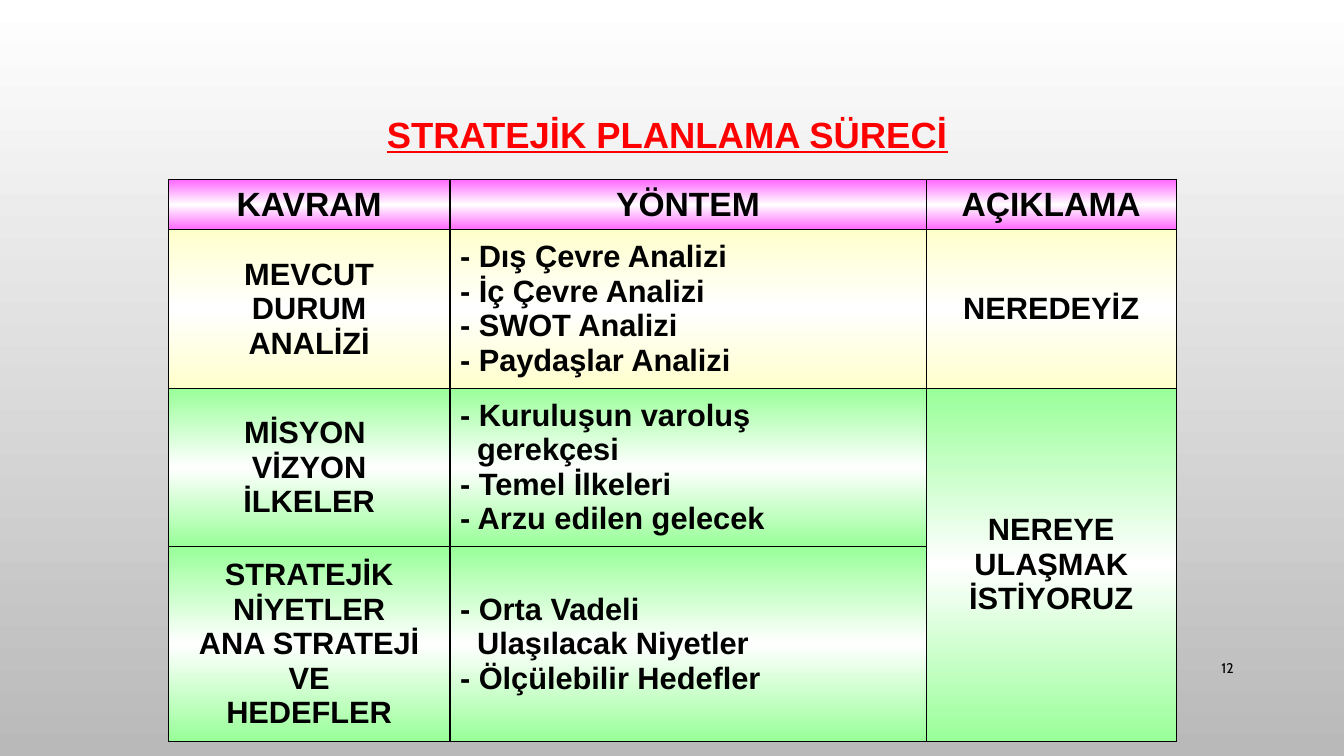
from copy import deepcopy

from lxml.etree import SubElement
from pptx import Presentation
from pptx.dml.color import RGBColor
from pptx.enum.text import MSO_ANCHOR as Anchor, PP_ALIGN as Align
from pptx.oxml.ns import qn
from pptx.util import Cm, Pt

BLACK, RED, WHITE, GREY = "000000", "FF0000", "FFFFFF", "B9B9B9"
PINK, CREAM, GREEN = "FF66FF", "FFFFCC", "99FF99"
COLUMN_WIDTHS = [7.1, 12, 6.3]
HANGING = Cm(0.43)

# Row height, edge colour, text size and cell texts;
# "\n" starts a paragraph, "\v" breaks a line inside one
ROWS = [
    (1.27, PINK, 24, ["KAVRAM", "YÖNTEM", "AÇIKLAMA"]),
    (3.99, CREAM, 22, [
        "MEVCUT\nDURUM\nANALİZİ",
        "- Dış Çevre Analizi\n- İç Çevre Analizi\n- SWOT Analizi\n- Paydaşlar Analizi",
        "NEREDEYİZ"]),
    (3.99, GREEN, 22, [
        "MİSYON \nVİZYON\nİLKELER",
        "- Kuruluşun varoluş\vgerekçesi\n- Temel İlkeleri\n- Arzu edilen gelecek",
        "NEREYE\nULAŞMAK\nİSTİYORUZ"]),
    (4.9, GREEN, 22, [
        "STRATEJİK NİYETLER\nANA STRATEJİ\nVE\nHEDEFLER",
        "- Orta Vadeli\vUlaşılacak Niyetler\n- Ölçülebilir Hedefler",
        ""]),
]


def color(value):
    return RGBColor.from_string(value)


def paint_gradient(fill, first, last):
    """Vertical gradient from top to bottom."""
    fill.gradient()
    fill.gradient_angle = 270
    for stop, value in zip(fill.gradient_stops, (first, last)):
        stop.color.rgb = color(value)


def add_run(para, text, size, font="Arial", ink=BLACK, bold=True, underline=False):
    span = para.add_run()
    span.text = text
    span.font.name, span.font.size = font, Pt(size)
    span.font.bold, span.font.underline = bold, underline
    span.font.color.rgb = color(ink)


def add_text(slide, left, top, width, height, text, size, align, anchor, **style):
    box = slide.shapes.add_textbox(Cm(left), Cm(top), Cm(width), Cm(height))
    frame = box.text_frame
    frame.word_wrap, frame.vertical_anchor = True, anchor
    para = frame.paragraphs[0]
    para.alignment = align
    add_run(para, text, size, **style)


def add_borders(cell):
    properties = cell._tc.get_or_add_tcPr()
    for side in ("a:lnL", "a:lnR", "a:lnT", "a:lnB"):
        line = SubElement(properties, qn(side), w=str(Pt(1)))
        solid = SubElement(line, qn("a:solidFill"))
        SubElement(solid, qn("a:srgbClr"), val=BLACK)


def paint_cell(cell, edge):
    """Edge colour at top and bottom, white in the middle."""
    paint_gradient(cell.fill, edge, edge)
    stops = next(cell._tc.iter(qn("a:gsLst")))
    middle = deepcopy(stops[0])
    middle.set("pos", "50000")
    middle[0].set("val", WHITE)
    stops.insert(1, middle)


def fill_cell(cell, text, size, listed):
    cell.vertical_anchor = Anchor.MIDDLE
    frame = cell.text_frame
    for number, content in enumerate(text.split("\n")):
        para = frame.add_paragraph() if number else frame.paragraphs[0]
        para.alignment = Align.LEFT if listed else Align.CENTER
        if listed:
            properties = para._p.get_or_add_pPr()
            properties.set("marL", str(HANGING))
            properties.set("indent", str(-HANGING))
        for part, line in enumerate(content.split("\v")):
            if part:
                para.add_line_break()
            add_run(para, line, size)


def add_process_table(slide):
    frame = slide.shapes.add_table(
        len(ROWS), len(COLUMN_WIDTHS), Cm(4.24), Cm(4.52),
        Cm(sum(COLUMN_WIDTHS)), Cm(sum(row[0] for row in ROWS)))
    table = frame.table
    table.first_row = table.horz_banding = False
    for column, width in zip(table.columns, COLUMN_WIDTHS):
        column.width = Cm(width)
    for r, (height, edge, size, texts) in enumerate(ROWS):
        table.rows[r].height = Cm(height)
        for c, text in enumerate(texts):
            cell = table.cell(r, c)
            add_borders(cell)
            paint_cell(cell, edge)
            if text:
                fill_cell(cell, text, size, listed=text.startswith("-"))
    table.cell(2, 2).merge(table.cell(3, 2))


def main():
    deck = Presentation()
    deck.slide_width, deck.slide_height = Cm(33.87), Cm(19.05)
    page = deck.slides.add_slide(deck.slide_layouts[6])
    paint_gradient(page.background.fill, WHITE, GREY)

    # Page number
    add_text(page, 29.21, 16.33, 2.13, 1.02, "12", 10, Align.RIGHT, Anchor.MIDDLE,
             font="Cabin", bold=False)
    # Process table
    add_process_table(page)
    # Title
    add_text(page, 9.5, 2.69, 15.49, 1.37, "STRATEJİK PLANLAMA SÜRECİ", 26,
             Align.JUSTIFY, Anchor.TOP, ink=RED, underline=True)

    deck.save("out.pptx")


if __name__ == "__main__":
    main()
